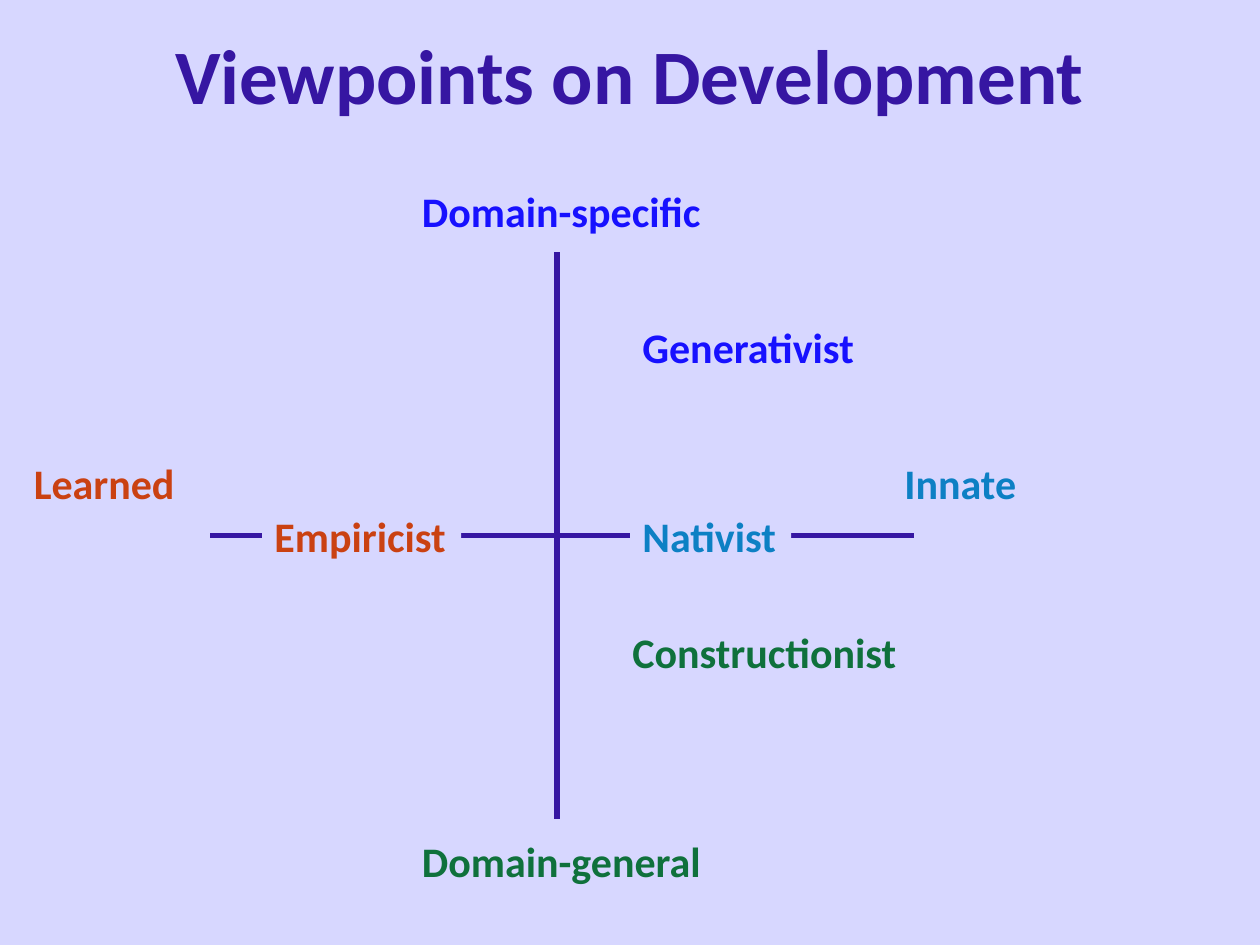
"""Build a slide that places viewpoints on development along two crossed axes."""
import pptx
import pptx.dml.color
import pptx.enum.shapes
import pptx.enum.text
import pptx.oxml.ns
import pptx.util
from lxml import etree
from pptx.util import Inches

RGBColor = pptx.dml.color.RGBColor
LAVENDER = RGBColor(0xD7, 0xD7, 0xFF)
PURPLE = RGBColor(0x36, 0x16, 0xA2)
BLUE = RGBColor(0x17, 0x11, 0xFF)
GREEN = RGBColor(0x0F, 0x71, 0x3C)
CYAN = RGBColor(0x0D, 0x80, 0xC4)
ORANGE = RGBColor(0xCA, 0x41, 0x12)

presentation = pptx.Presentation()
presentation.slide_width = Inches(10)
presentation.slide_height = Inches(7.5)
slide = presentation.slides.add_slide(presentation.slide_layouts[6])
slide.background.fill.solid()
slide.background.fill.fore_color.rgb = LAVENDER


def add_text(text, left, top, width, height, size, color):
    shape = slide.shapes.add_textbox(Inches(left), Inches(top), Inches(width), Inches(height))
    paragraph = shape.text_frame.paragraphs[0]
    paragraph.text = text
    paragraph.font.name = "Calibri"
    paragraph.font.size = pptx.util.Pt(size)
    paragraph.font.bold = True
    paragraph.font.color.rgb = color
    return shape


axes = [(4.42, 2, 4.42, 6.5), (7.25, 4.25, 1.67, 4.25)]
for ends in axes:
    axis = slide.shapes.add_connector(
        pptx.enum.shapes.MSO_CONNECTOR.STRAIGHT, *[Inches(end) for end in ends]
    )
    axis.line.color.rgb = PURPLE
    axis.line.width = pptx.util.Pt(3)
    etree.SubElement(axis.element.spPr, pptx.oxml.ns.qn("a:effectLst"))

labels = [
    ("Generativist", 5, 2.5, 1.9, BLUE, False),
    ("Constructionist", 4.92, 4.92, 2.32, GREEN, False),
    ("Domain-specific", 3.25, 1.42, 2.44, BLUE, False),
    ("Domain-general", 3.25, 6.58, 2.44, GREEN, False),
    ("Innate", 7.08, 3.58, 1.1, CYAN, False),
    ("Learned", 0.17, 3.58, 1.33, ORANGE, False),
    ("Empiricist", 2.08, 4, 1.58, ORANGE, True),
    ("Nativist", 5, 4, 1.28, CYAN, True),
]
for text, left, top, width, color, covers_axis in labels:
    label = add_text(text, left, top, width, 0.5, 24, color)
    label.text_frame.word_wrap = False
    label.text_frame.auto_size = pptx.enum.text.MSO_AUTO_SIZE.SHAPE_TO_FIT_TEXT
    if covers_axis:
        label.fill.solid()
        label.fill.fore_color.rgb = LAVENDER

title = add_text("Viewpoints on Development", 0.75, 0.17, 8.5, 1.25, 44, PURPLE)
title.text_frame.word_wrap = True
title.text_frame.paragraphs[0].alignment = pptx.enum.text.PP_ALIGN.CENTER

presentation.save("out.pptx")
